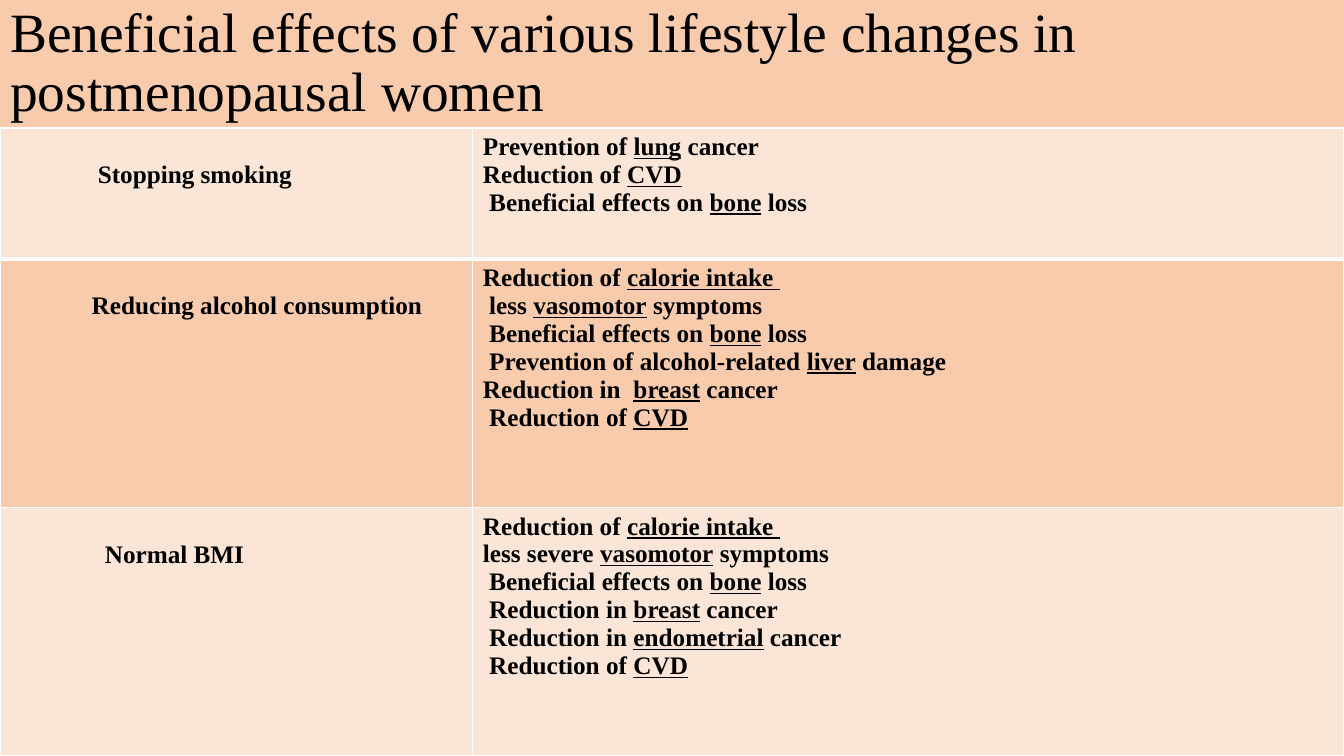
import pptx
import pptx.dml.color
import pptx.enum.text
import pptx.oxml
import pptx.oxml.ns
import pptx.util

# Content: underscores enclose underlined words
TITLE = "Beneficial effects of various lifestyle changes in postmenopausal women"
# Each row: lifestyle change, its indent in inches, its effects
CHANGES = [
    ("Stopping smoking", 0.87, [
        "Prevention of _lung_ cancer",
        "Reduction of _CVD_",
        " Beneficial effects on _bone_ loss",
    ]),
    ("Reducing alcohol consumption", 0.81, [
        "Reduction of _calorie intake _",
        " less _vasomotor_ symptoms",
        " Beneficial effects on _bone_ loss",
        " Prevention of alcohol-related _liver_ damage",
        "Reduction in  _breast_ cancer",
        " Reduction of _CVD_",
    ]),
    ("Normal BMI", 0.94, [
        "Reduction of _calorie intake _",
        "less severe _vasomotor_ symptoms",
        " Beneficial effects on _bone_ loss",
        " Reduction in _breast_ cancer",
        " Reduction in _endometrial_ cancer",
        " Reduction of _CVD_",
    ]),
]

# Layout and style
WIDTH, HEIGHT = 13.33, 7.5
TITLE_HEIGHT = 1.27
FIRST_ROW = 1.3
OTHER_ROW = (HEIGHT - TITLE_HEIGHT - FIRST_ROW) / (len(CHANGES) - 1)
LEFT_COLUMN = 4.69
LINE_HEIGHT = 0.28
FONT = "Times New Roman"
BLACK, WHITE, PEACH, PALE = "000000", "FFFFFF", "F8CBAD", "FBE5D6"
inches = pptx.util.Inches


def color(value):
    return pptx.dml.color.RGBColor.from_string(value)


def paint(target, value):
    target.fill.solid()
    target.fill.fore_color.rgb = color(value)


def add_run(paragraph, text, size, bold=False, underline=False):
    run = paragraph.add_run()
    run.text = text
    run.font.name = FONT
    run.font.size = pptx.util.Pt(size)
    run.font.bold = bold
    run.font.underline = underline
    run.font.color.rgb = color(BLACK)


def write_lines(cell, lines):
    frame = cell.text_frame
    for number, line in enumerate(lines):
        paragraph = frame.paragraphs[0] if number == 0 else frame.add_paragraph()
        for part, text in enumerate(line.split("_")):
            if text:
                add_run(paragraph, text, 18, bold=True, underline=part % 2 == 1)


def set_borders(cell, top, bottom):
    properties = cell._tc.get_or_add_tcPr()
    sides = [("lnL", 1), ("lnR", 1), ("lnT", top), ("lnB", bottom)]
    for position, (side, points) in enumerate(sides):
        properties.insert(position, pptx.oxml.parse_xml(
            f'<a:{side} {pptx.oxml.ns.nsdecls("a")} w="{pptx.util.Pt(points)}">'
            f'<a:solidFill><a:srgbClr val="{WHITE}"/></a:solidFill></a:{side}>'))


presentation = pptx.Presentation()
presentation.slide_width, presentation.slide_height = inches(WIDTH), inches(HEIGHT)
slide = presentation.slides.add_slide(presentation.slide_layouts[5])

# Title band
title = slide.shapes.title
title.left, title.top = 0, 0
title.width, title.height = inches(WIDTH), inches(TITLE_HEIGHT)
paint(title, PEACH)
title.text_frame.word_wrap = True
title.text_frame.auto_size = pptx.enum.text.MSO_AUTO_SIZE.NONE
title.text_frame.vertical_anchor = pptx.enum.text.MSO_ANCHOR.MIDDLE
heading = title.text_frame.paragraphs[0]
heading.alignment = pptx.enum.text.PP_ALIGN.LEFT
heading.line_spacing = 0.9
add_run(heading, TITLE, 39.6)

# Table of lifestyle changes
table = slide.shapes.add_table(
    len(CHANGES), 2, 0, inches(TITLE_HEIGHT),
    inches(WIDTH), inches(HEIGHT - TITLE_HEIGHT)).table
table.first_row = table.horz_banding = False
table.columns[0].width = inches(LEFT_COLUMN)
table.columns[1].width = inches(WIDTH - LEFT_COLUMN)

for index, (change, indent, effects) in enumerate(CHANGES):
    table.rows[index].height = inches(OTHER_ROW if index else FIRST_ROW)
    change_cell, effects_cell = table.cell(index, 0), table.cell(index, 1)
    write_lines(change_cell, [change])
    write_lines(effects_cell, effects)
    # The change sits level with the second effect
    change_cell.margin_top = inches(0.05 + LINE_HEIGHT)
    change_cell.margin_left = inches(0.1 + indent)
    for cell in (change_cell, effects_cell):
        paint(cell, PEACH if index % 2 else PALE)
        set_borders(cell, top=3 if index == 1 else 1, bottom=3 if index == 0 else 1)

presentation.save("out.pptx")
